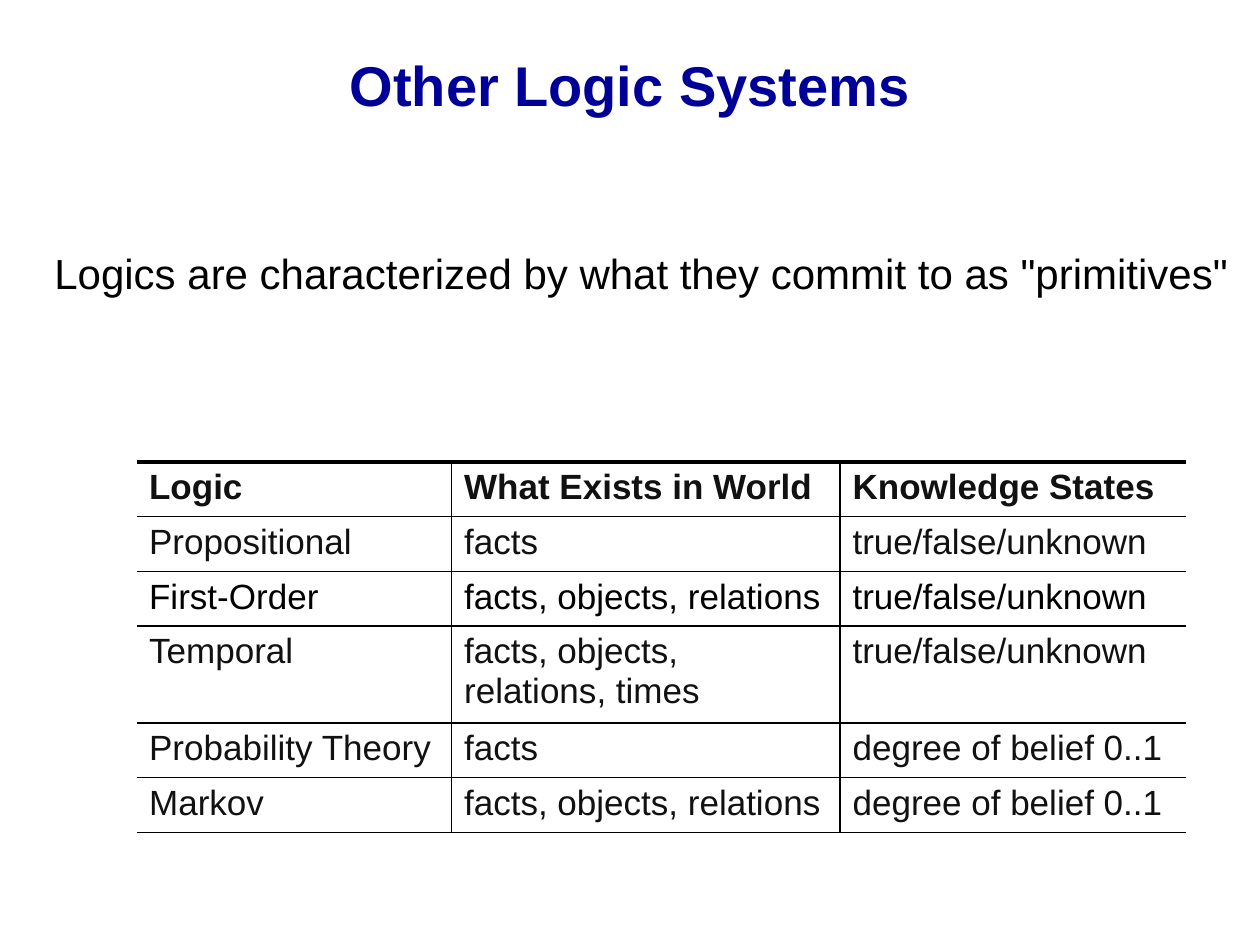
"""Build the slide on other logic systems, with its table of logics."""
import pptx
import pptx.util
import pptx.dml.color
import pptx.enum.text
import pptx.oxml
import pptx.oxml.ns

HUES = {"title": "000099", "text": "000000", "cell": "111111", "line": "000000"}
ROWS = [
    ("Logic", "What Exists in World", "Knowledge States"),
    ("Propositional", "facts", "true/false/unknown"),
    ("First-Order", "facts, objects, relations", "true/false/unknown"),
    ("Temporal", "facts, objects, relations, times", "true/false/unknown"),
    ("Probability Theory", "facts", "degree of belief 0..1"),
    ("Markov", "facts, objects, relations", "degree of belief 0..1"),
]
COLS = (30, 37, 33)
HIGH = [0.43, 0.43, 0.43, 0.77, 0.43, 0.43]
inch = pptx.util.Inches
unit = inch(10) // 120


def write(frame, text, size, hue, bold=False, align="LEFT", before=0):
    frame.word_wrap = True
    para = frame.paragraphs[0]
    para.alignment = getattr(pptx.enum.text.PP_ALIGN, align)
    para.space_before = pptx.util.Pt(before)
    run = para.add_run()
    run.text = text
    run.font.name = "Arial"
    run.font.size = pptx.util.Pt(size)
    run.font.bold = bold
    run.font.color.rgb = pptx.dml.color.RGBColor.from_string(HUES[hue])


def edge(cell, spot, side, width):
    fill = f'<a:solidFill><a:srgbClr val="{HUES["line"]}"/></a:solidFill>' if width else "<a:noFill/>"
    line = pptx.oxml.parse_xml(
        f'<a:ln{side} {pptx.oxml.ns.nsdecls("a")} w="{pptx.util.Pt(width)}">{fill}</a:ln{side}>')
    cell._tc.get_or_add_tcPr().insert(spot, line)


deck = pptx.Presentation()
deck.slide_width, deck.slide_height = inch(10), inch(7.5)
slide = deck.slides.add_slide(deck.slide_layouts[5])

title = slide.shapes.title
title.left, title.top, title.width, title.height = 9 * unit, 2 * unit, 102 * unit, 12 * unit
title.text_frame.vertical_anchor = pptx.enum.text.MSO_ANCHOR.MIDDLE
write(title.text_frame, "Other Logic Systems", 32, "title", bold=True, align="CENTER")

body = slide.shapes.add_textbox(4 * unit, 23 * unit, 115 * unit, 11 * unit)
write(body.text_frame, 'Logics are characterized by what they commit to as "primitives"',
      24, "text", before=6)

frame = slide.shapes.add_table(len(ROWS), len(COLS), 13 * unit, 44 * unit,
                               sum(COLS) * unit, inch(sum(HIGH)))
table = frame.table
table.first_row = table.horz_banding = False
for col, wide in zip(table.columns, COLS):
    col.width = wide * unit
for row, high in zip(table.rows, HIGH):
    row.height = inch(high)

last = len(COLS) - 1
for r, words in enumerate(ROWS):
    for c, word in enumerate(words):
        cell = table.cell(r, c)
        cell.fill.background()
        write(cell.text_frame, word, 20, "text" if r == 2 else "cell", bold=r == 0)
        sides = {"L": int(c > 0), "R": int(c < last), "T": 1 if r else 2.25, "B": 1}
        for spot, (side, width) in enumerate(sides.items()):
            edge(cell, spot, side, width)

deck.save("out.pptx")
